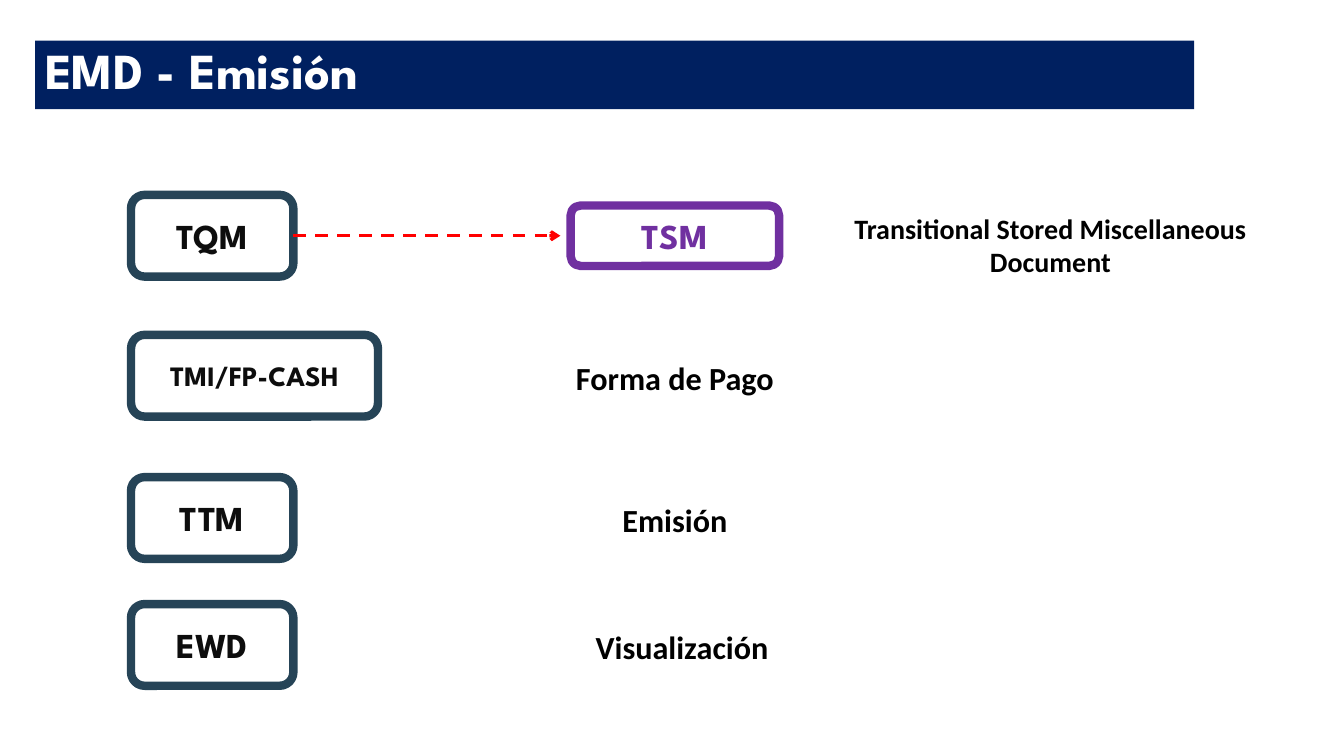
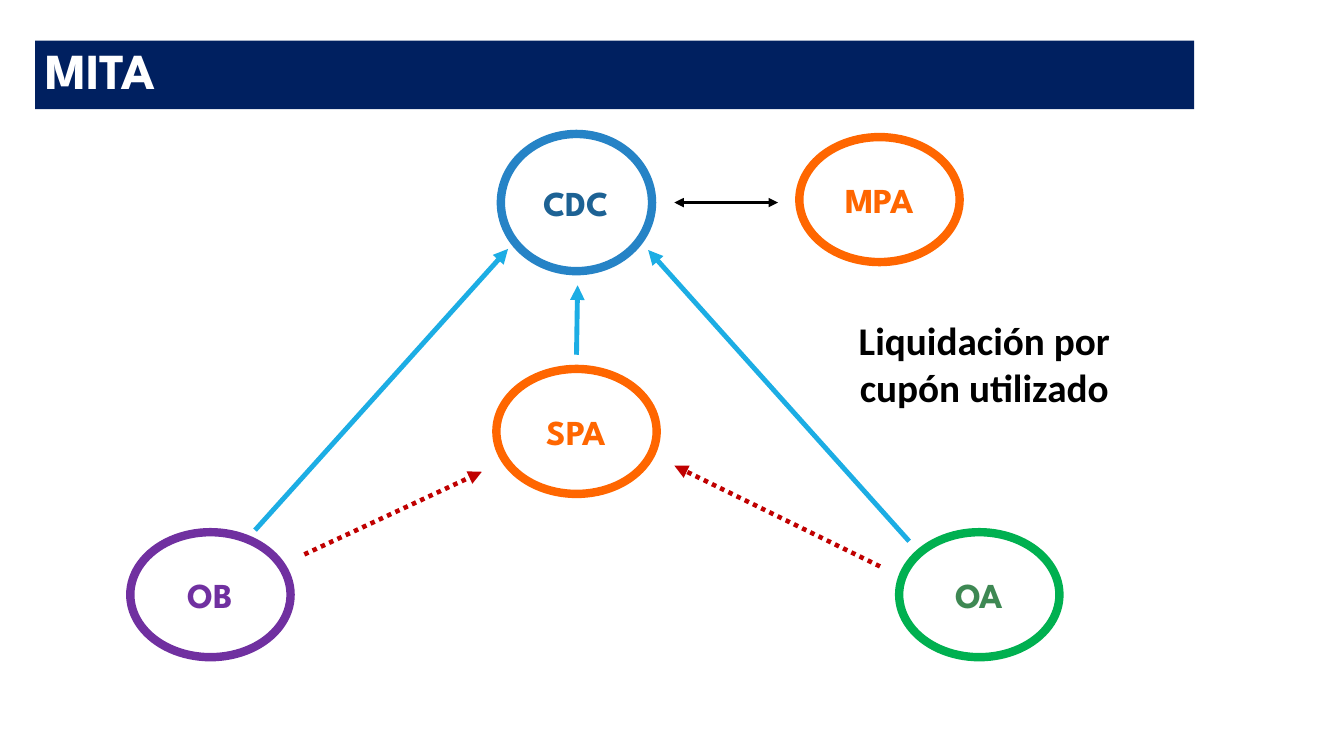
from lxml.etree import SubElement
from pptx import Presentation
from pptx.dml.color import RGBColor
from pptx.enum.dml import MSO_LINE
from pptx.enum.shapes import MSO_CONNECTOR, MSO_SHAPE
from pptx.enum.text import MSO_ANCHOR, PP_ALIGN
from pptx.oxml.ns import qn
from pptx.util import Pt

# Shared look
HEAD, BODY = "League Spartan", "Calibri"
NAVY, SLATE, INK = "002060", "264457", "0D0D0D"
WHITE, BLACK, RED, WINE = "FFFFFF", "000000", "FF0000", "C00000"
PURPLE, ORANGE, GREEN, MOSS = "7030A0", "FF6600", "00B050", "3E8853"
BLUE, DEEP, SKY = "2683C6", "1D6294", "1CADE4"
BAND = (25, 29, 828, 49)


def color(hue):
    return RGBColor.from_string(hue)


def write(shape, text, size=25, font=HEAD, hue=BLACK, align=PP_ALIGN.CENTER,
          anchor=MSO_ANCHOR.TOP, space=None):
    """Fill a shape with bold text, one paragraph per line."""
    frame = shape.text_frame
    frame.word_wrap = True
    frame.vertical_anchor = anchor
    frame.text = text
    for para in frame.paragraphs:
        para.alignment = align
        para.line_spacing = space
        para.font.name, para.font.size = font, Pt(size)
        para.font.bold = True
        para.font.color.rgb = color(hue)


def label(slide, box, text, **style):
    write(slide.shapes.add_textbox(*map(Pt, box)), text, font=BODY, **style)


def node(slide, kind, box, text, edge, **style):
    shape = slide.shapes.add_shape(kind, *map(Pt, box))
    shape.shadow.inherit = False
    shape.fill.solid()
    shape.fill.fore_color.rgb = color(WHITE)
    shape.line.color.rgb = color(edge)
    shape.line.width = Pt(6)
    write(shape, text, anchor=MSO_ANCHOR.MIDDLE, **style)
    return shape


def arrow(slide, ends, hue, width, dash=None, head=None, tail="triangle"):
    link = slide.shapes.add_connector(MSO_CONNECTOR.STRAIGHT, *map(Pt, ends))
    link.line.color.rgb = color(hue)
    link.line.width = Pt(width)
    if dash:
        link.line.dash_style = dash
    edge = link.line._get_or_add_ln()
    for tag, kind in (("a:headEnd", head), ("a:tailEnd", tail)):
        if kind:
            SubElement(edge, qn(tag), type=kind)
    SubElement(link._element.spPr, qn("a:effectLst"))
    return link


def start(deck, text):
    """Add a slide with its title band."""
    slide = deck.slides.add_slide(deck.slide_layouts[5])
    title = slide.shapes.title
    title.left, title.top, title.width, title.height = map(Pt, BAND)
    title.fill.solid()
    title.fill.fore_color.rgb = color(NAVY)
    write(title, text, size=36, hue=WHITE, align=PP_ALIGN.LEFT, space=0.9)
    return slide


def steps(slide, left, top):
    """Command boxes in a column, each with its meaning."""
    high, mid = 58.4, 29.2
    rows = [  # top, width, size, command, centre of meaning, meaning
        (0, 116, 25, "TQM", None, None),
        (100, 176.4, 20, "TMI/FP-CASH", 388.6, "Forma de Pago"),
        (201.6, 116, 25, "TTM", 388.6, "Emisión"),
        (292.3, 116, 25, "EWD", 393.8, "Visualización"),
    ]
    boxes = []
    for y, wide, size, code, centre, text in rows:
        boxes.append(node(slide, MSO_SHAPE.ROUNDED_RECTANGLE,
                          (left, top + y, wide, high), code, SLATE,
                          size=size, hue=INK))
        if text:
            label(slide, (left + centre - 180, top + y + 13.3, 360, 35),
                  text, size=23)

    # Stored document made by the first command
    node(slide, MSO_SHAPE.ROUNDED_RECTANGLE,
         (left + 314, top + mid - 21.6, 149, 43.2), "TSM", PURPLE, hue=PURPLE)
    link = arrow(slide, (left + 116, top + mid, left + 306.7, top + mid),
                 RED, 2.25, MSO_LINE.DASH, tail="arrow")
    link.begin_connect(boxes[0], 3)
    label(slide, (left + 473.8, top + 8, 365.8, 55.4),
          "Transitional Stored Miscellaneous\nDocument", size=20)


def net(slide, left, top):
    """Parties as ovals, joined by settlement arrows."""
    wide, high = 114.5, 89.3
    ovals = [  # centre, size, name, edge, text colour
        (321.8, 54.7, 108, 98, "CDC", BLUE, DEEP),
        (60.3, 334.8, wide, high, "OB", PURPLE, PURPLE),
        (609.5, 334.8, wide, high, "OA", GREEN, MOSS),
        (321.8, 218.2, wide, high, "SPA", ORANGE, ORANGE),
        (538.2, 52.6, wide, high, "MPA", ORANGE, ORANGE),
    ]
    for x, y, w, h, name, edge, hue in ovals:
        node(slide, MSO_SHAPE.OVAL,
             (left + x - w / 2, top + y - h / 2, w, h), name, edge, hue=hue)

    solid = dict(hue=SKY, width=3.5)
    dots = dict(hue=WINE, width=3.25, dash=MSO_LINE.ROUND_DOT)
    both = dict(hue=BLACK, width=2.25, head="triangle")
    links = [
        (92.2, 288.7, 272.9, 87.8, solid),
        (559.4, 296.6, 373, 88.6, solid),
        (127.4, 306, 254.2, 247, dots),
        (538.6, 314.6, 391.7, 242.6, dots),
        (321.8, 163.4, 322.6, 113.8, solid),
        (391.7, 54.7, 465.8, 54.7, both),
    ]
    for x1, y1, x2, y2, style in links:
        arrow(slide, (left + x1, top + y1, left + x2, top + y2), **style)
    label(slide, (left + 515.5, top + 132.5, 195, 75),
          "Liquidación por cupón utilizado", size=28)


def main():
    deck = Presentation()
    deck.slide_width, deck.slide_height = Pt(960), Pt(540)
    steps(start(deck, "EMD - Emisión"), 93.6, 139.2)
    net(start(deck, "MITA"), 90, 90)
    deck.save("out.pptx")


if __name__ == "__main__":
    main()
